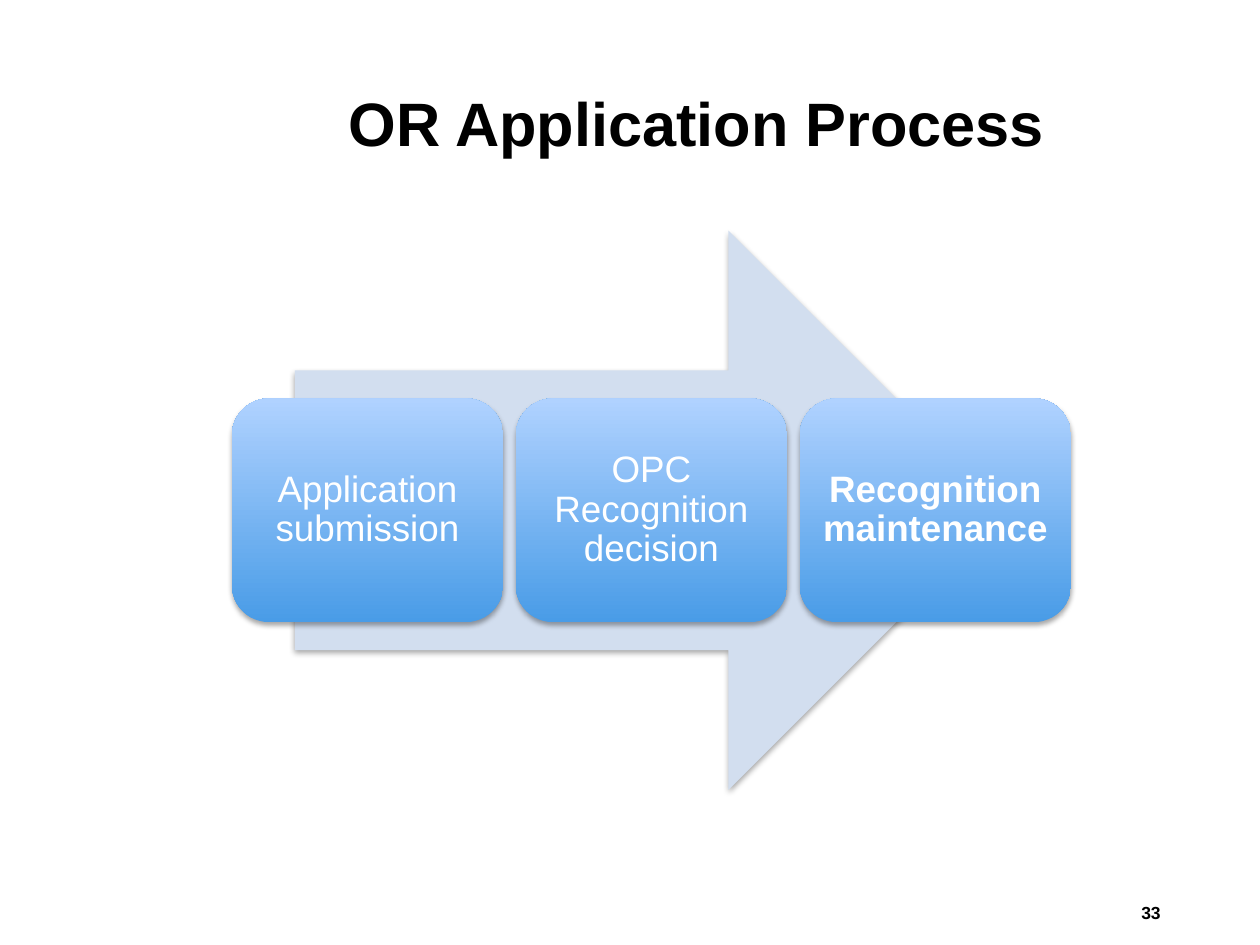
from lxml import etree
from pptx import Presentation
from pptx.dml.color import RGBColor
from pptx.enum.shapes import MSO_SHAPE
from pptx.enum.text import MSO_ANCHOR, PP_ALIGN
from pptx.oxml import parse_xml
from pptx.oxml.ns import nsdecls
from pptx.util import Inches, Pt

ARROW, ROUND = MSO_SHAPE.RIGHT_ARROW, MSO_SHAPE.ROUNDED_RECTANGLE
MIDDLE = MSO_ANCHOR.MIDDLE
LEFT, CENTER, RIGHT = PP_ALIGN.LEFT, PP_ALIGN.CENTER, PP_ALIGN.RIGHT

# Content
TITLE = "OR Application Process"
PAGE = "33"
STEPS = [  # text, bold
    ("Application submission", False),
    ("OPC Recognition decision", False),
    ("Recognition maintenance", True),
]

# Layout in inches
WIDE, HIGH = 10, 7.5
BAND_X, BAND_Y, BAND_W, BAND_H = 1.84, 1.83, 6.66, 4.44
GAP = 0.1
CARD_W = (BAND_W - GAP * (len(STEPS) - 1)) / len(STEPS)
CARD_H = BAND_H * 0.4
ARROW_W = BAND_W * 0.85


def color(code):
    return RGBColor.from_string(code)


def write(shape, text, size, ink, bold, align, pad, space=1.0):
    frame = shape.text_frame
    frame.word_wrap = True
    frame.vertical_anchor = MIDDLE
    frame.margin_left = frame.margin_right = Inches(pad[0])
    frame.margin_top = frame.margin_bottom = Inches(pad[1])
    frame.text = text
    para = frame.paragraphs[0]
    para.alignment = align
    para.line_spacing = space
    font = para.runs[0].font
    font.name, font.size, font.bold = "Arial", Pt(size), bold
    font.color.rgb = color(ink)


def shade(shape):
    """Give the shape a soft shadow straight below it."""
    shape.shadow.inherit = False
    effects = shape._element.spPr.find("{*}effectLst")
    effects.append(parse_xml(
        f'<a:outerShdw {nsdecls("a")} blurRad="{Pt(3.1)}" dist="{Pt(1.8)}"'
        ' dir="5400000" rotWithShape="0"><a:srgbClr val="000000">'
        '<a:alpha val="35000"/></a:srgbClr></a:outerShdw>'))


def block(slide, kind, *box):
    shape = slide.shapes.add_shape(kind, *map(Inches, box))
    shape.line.fill.background()
    shade(shape)
    return shape


def label(slide, box, *style):
    write(slide.shapes.add_textbox(*map(Inches, box)), *style)


def main():
    deck = Presentation()
    deck.slide_width, deck.slide_height = Inches(WIDE), Inches(HIGH)
    slide = deck.slides.add_slide(deck.slide_layouts[6])

    # Title and page number
    label(slide, (2.67, 0.28, 7.14, 1.45),
          TITLE, 35, "000000", True, LEFT, (0.1, 0.1), 0.9)
    label(slide, (7.06, 7.04, 2.25, 0.4),
          PAGE, 10, "000000", True, RIGHT, (0.1, 0.05))

    # Arrow centred behind the cards
    arrow = block(slide, ARROW, BAND_X + (BAND_W - ARROW_W) / 2, BAND_Y,
                  ARROW_W, BAND_H)
    arrow.fill.solid()
    arrow.fill.fore_color.rgb = color("D2DEEF")

    # Step cards
    top = BAND_Y + (BAND_H - CARD_H) / 2
    for i, (text, bold) in enumerate(STEPS):
        card = block(slide, ROUND, BAND_X + i * (CARD_W + GAP), top,
                     CARD_W, CARD_H)
        card.fill.gradient()
        card.fill.gradient_angle = 90
        for stop, code in zip(card.fill.gradient_stops, ("499CE7", "B0D2FF")):
            stop.color.rgb = color(code)
        write(card, text, 21, "FFFFFF", bold, CENTER, (0.09, 0.09), 0.9)

    deck.save("out.pptx")


if __name__ == "__main__":
    main()
